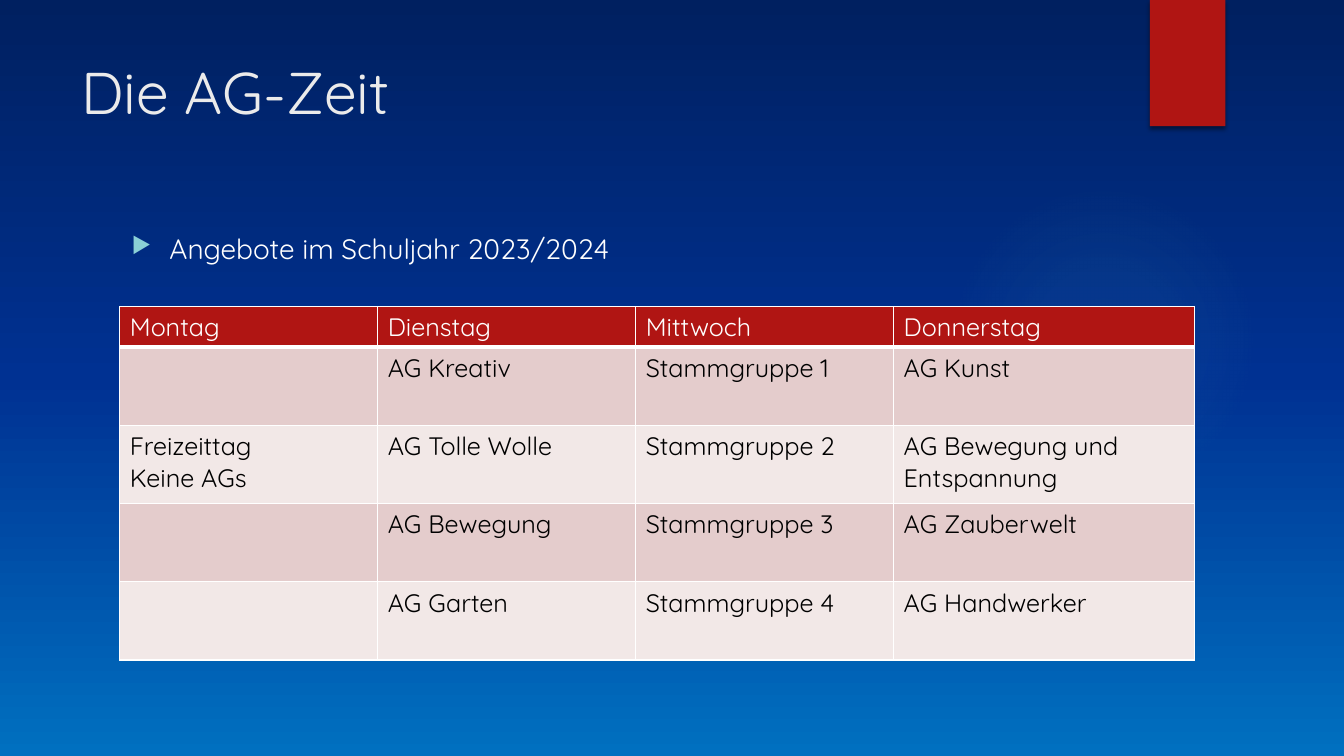
"""Builds the slide on the after-school clubs and their weekly plan."""
import pptx
import pptx.dml.color
import pptx.enum.shapes
import pptx.oxml
import pptx.oxml.ns
import pptx.util

Cm = pptx.util.Cm
Pt = pptx.util.Pt
RGBColor = pptx.dml.color.RGBColor

NIGHT = RGBColor(0x00, 0x20, 0x60)
ROYAL = RGBColor(0x00, 0x31, 0x92)
SKY = RGBColor(0x00, 0x70, 0xC0)
TEAL = RGBColor(0x50, 0xB9, 0xC1)
AQUA = RGBColor(0x8A, 0xD0, 0xD6)
RED = RGBColor(0xB0, 0x15, 0x13)
ROSE = RGBColor(0xE4, 0xCC, 0xCC)
PALE = RGBColor(0xF2, 0xE8, 0xE7)
MIST = RGBColor(0xEB, 0xEB, 0xEB)
WHITE = RGBColor(0xFF, 0xFF, 0xFF)
BLACK = RGBColor(0x00, 0x00, 0x00)

WEEK_PLAN = [
    ["Montag", "Dienstag", "Mittwoch", "Donnerstag"],
    ["", "AG Kreativ", "Stammgruppe 1", "AG Kunst"],
    ["Freizeittag\nKeine AGs", "AG Tolle Wolle", "Stammgruppe 2", "AG Bewegung und Entspannung"],
    ["", "AG Bewegung", "Stammgruppe 3", "AG Zauberwelt"],
    ["", "AG Garten", "Stammgruppe 4", "AG Handwerker"],
]


def drawing(markup):
    return pptx.oxml.parse_xml(markup.replace(">", f" {pptx.oxml.ns.nsdecls('a')}>", 1))


def gradient(stops, direction):
    marks = "".join(
        f'<a:gs pos="{place * 1000}"><a:srgbClr val="{color}">'
        f'<a:alpha val="{alpha * 1000}"/></a:srgbClr></a:gs>'
        for place, color, alpha in stops)
    return drawing(f'<a:gradFill rotWithShape="1"><a:gsLst>{marks}</a:gsLst>{direction}</a:gradFill>')


class ClubSlide:
    """Holds the font and the slide and draws each kind of element."""

    def __init__(self, slide, font):
        self.slide = slide
        self.font = font

    def background(self, stops):
        self.slide.background.fill.solid()
        properties = self.slide.element.xpath(".//p:bgPr")[0]
        properties.replace(properties[0], gradient(stops, '<a:lin ang="5400000" scaled="0"/>'))

    def shape(self, kind, left, top, width, height, color):
        shape = self.slide.shapes.add_shape(kind, Cm(left), Cm(top), Cm(width), Cm(height))
        shape.shadow.inherit = False
        shape.fill.solid()
        shape.fill.fore_color.rgb = color
        shape.line.fill.background()
        return shape

    def glow(self, left, top, size, stops):
        oval = pptx.enum.shapes.MSO_SHAPE.OVAL
        properties = self.shape(oval, left, top, size, size, TEAL).element.spPr
        center = ('<a:path path="circle"><a:fillToRect l="50000" t="50000" '
                  'r="50000" b="50000"/></a:path>')
        solid = properties.find(pptx.oxml.ns.qn("a:solidFill"))
        properties.replace(solid, gradient(stops, center))

    def ribbon(self, left, top, width, height, color):
        rectangle = pptx.enum.shapes.MSO_SHAPE.RECTANGLE
        properties = self.shape(rectangle, left, top, width, height, color).element.spPr
        effects = properties.find(pptx.oxml.ns.qn("a:effectLst"))
        effects.append(drawing(
            f'<a:outerShdw blurRad="{Pt(3)}" dist="{Pt(2)}" dir="5400000" rotWithShape="0">'
            f'<a:srgbClr val="{BLACK}"><a:alpha val="45000"/></a:srgbClr></a:outerShdw>'))

    def run(self, paragraph, words, size, color):
        run = paragraph.add_run()
        run.text = words
        run.font.name = self.font
        run.font.size = Pt(size)
        run.font.color.rgb = color

    def text(self, words, left, top, width, height, size, color, bullet_color=None):
        box = self.slide.shapes.add_textbox(Cm(left), Cm(top), Cm(width), Cm(height))
        box.text_frame.word_wrap = True
        paragraph = box.text_frame.paragraphs[0]
        if bullet_color is not None:
            properties = paragraph._p.get_or_add_pPr()
            properties.set("marL", str(Cm(0.95)))
            properties.set("indent", str(-Cm(0.95)))
            for markup in (f'<a:buClr><a:srgbClr val="{bullet_color}"/></a:buClr>',
                           '<a:buSzPct val="80000"></a:buSzPct>',
                           '<a:buChar char="▶"></a:buChar>'):
                properties.append(drawing(markup))
        self.run(paragraph, words, size, color)

    def cell(self, cell, words, size, color, fill, top, bottom):
        properties = cell._tc.get_or_add_tcPr()
        for side, width in (("L", 1), ("R", 1), ("T", top), ("B", bottom)):
            properties.append(drawing(
                f'<a:ln{side} w="{Pt(width)}"><a:solidFill><a:srgbClr val="{WHITE}"/>'
                f'</a:solidFill></a:ln{side}>'))
        cell.fill.solid()
        cell.fill.fore_color.rgb = fill
        frame = cell.text_frame
        for number, line in enumerate(words.split("\n") if words else []):
            paragraph = frame.add_paragraph() if number else frame.paragraphs[0]
            self.run(paragraph, line, size, color)

    def table(self, rows, left, top, widths, heights, size):
        table = self.slide.shapes.add_table(
            len(rows), len(widths), Cm(left), Cm(top), Cm(sum(widths)), Cm(sum(heights))).table
        table.first_row = False
        table.horz_banding = False
        for column, width in zip(table.columns, widths):
            column.width = Cm(width)
        for number, (row, height) in enumerate(zip(rows, heights)):
            table.rows[number].height = Cm(height)
            fill = (PALE, ROSE)[number % 2] if number else RED
            color = BLACK if number else WHITE
            for place, words in enumerate(row):
                self.cell(table.cell(number, place), words, size, color, fill,
                          top=3 if number == 1 else 1, bottom=1 if number else 3)


def main():
    presentation = pptx.Presentation()
    presentation.slide_width = Cm(33.87)
    presentation.slide_height = Cm(19.05)
    clubs = ClubSlide(presentation.slides.add_slide(presentation.slide_layouts[6]), "Quicksand")
    clubs.background([(0, NIGHT, 100), (50, ROYAL, 100), (100, SKY, 100)])
    clubs.glow(23.9, 4.65, 7.82, [(0, TEAL, 7), (36, TEAL, 6), (69, TEAL, 0)])
    clubs.ribbon(28.98, 0, 1.9, 3.18, RED)
    clubs.text("Die AG-Zeit", 1.8, 1.27, 26.14, 3.89, 42, MIST)
    clubs.text("Angebote im Schuljahr 2023/2024", 3.07, 5.72, 27.2, 1.2, 20, WHITE, AQUA)
    clubs.table(WEEK_PLAN, 3.02, 7.72, [6.5] * 3 + [7.58], [1.03] + [1.97] * 4, 18)
    presentation.save("out.pptx")


if __name__ == "__main__":
    main()
